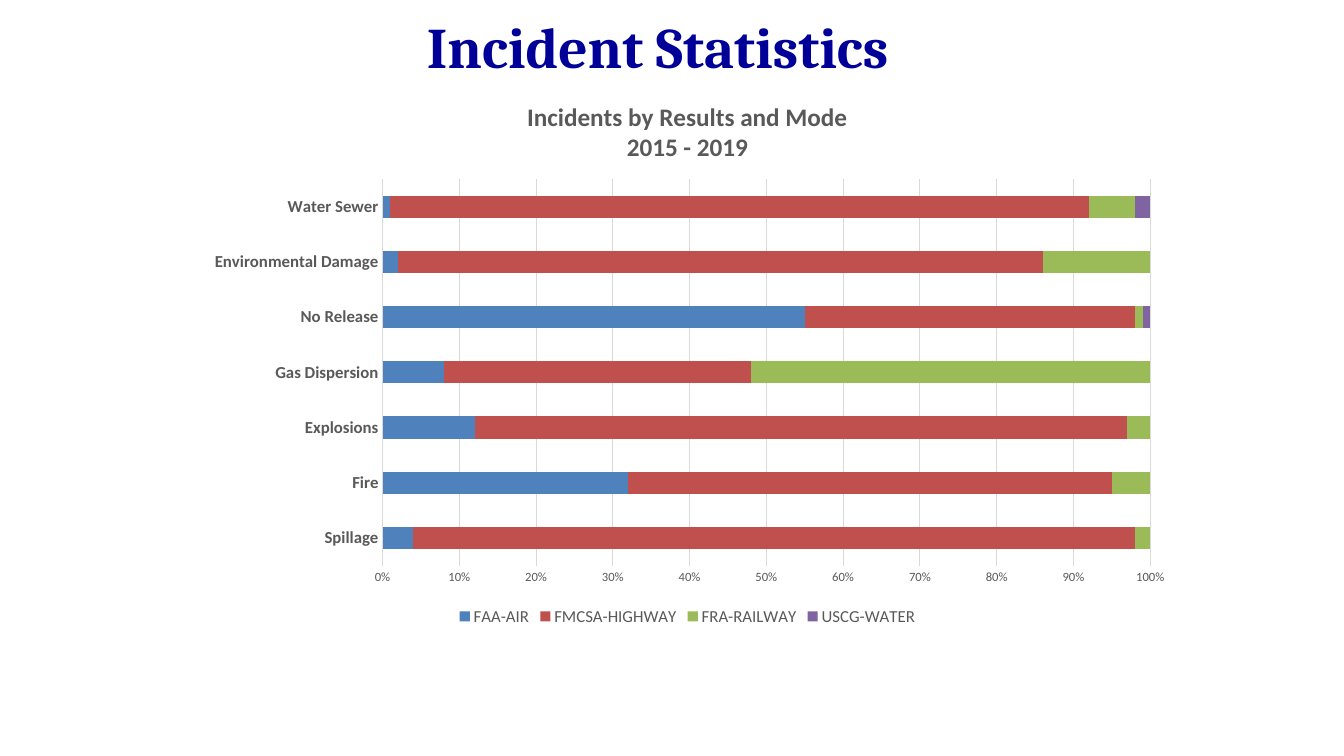
import pptx
import pptx.chart.data
import pptx.dml.color
import pptx.enum.chart
import pptx.enum.text
import pptx.oxml
import pptx.util

THEME = {
    "title": ("Cambria", 41, True, "000099"),
    "chart title": ("Calibri", 18, True, "595959"),
    "category": ("Calibri", 12, True, "595959"),
    "percent": ("Calibri", 9, False, "595959"),
    "legend": ("Calibri", 12, False, "595959"),
    "chart": ("Calibri", 10, False, "000000"),
    "grid": "D9D9D9",
}

RESULTS = ["Spillage", "Fire", "Explosions", "Gas Dispersion",
           "No Release", "Environmental Damage", "Water Sewer"]
MODES = [
    ("FAA-AIR", "4F81BD", (4, 32, 12, 8, 55, 2, 1)),
    ("FMCSA-HIGHWAY", "C0504D", (94, 63, 85, 40, 43, 84, 92)),
    ("FRA-RAILWAY", "9BBB59", (2, 5, 3, 52, 1, 14, 6)),
    ("USCG-WATER", "8064A2", (0, 0, 0, 0, 1, 0, 2)),
]


def style(font, role):
    font.name, size, font.bold, color = THEME[role]
    font.size = pptx.util.Pt(size)
    font.color.rgb = pptx.dml.color.RGBColor.from_string(color)


def draw_line(line, color):
    line.color.rgb = pptx.dml.color.RGBColor.from_string(color)
    line.width = pptx.util.Pt(0.75)


presentation = pptx.Presentation()
presentation.slide_width = width = pptx.util.Inches(13.33)
presentation.slide_height = height = pptx.util.Inches(7.5)
slide = presentation.slides.add_slide(presentation.slide_layouts[5])

title = slide.shapes.title
title.left, title.top = int(width * 0.152), int(height * 0.015)
title.width, title.height = int(width * 0.675), int(height * 0.167)
frame = title.text_frame
frame.auto_size = pptx.enum.text.MSO_AUTO_SIZE.NONE
frame.vertical_anchor = pptx.enum.text.MSO_ANCHOR.TOP
frame.margin_top = 0
paragraph = frame.paragraphs[0]
paragraph.alignment = pptx.enum.text.PP_ALIGN.CENTER
run = paragraph.add_run()
run.text = "Incident Statistics"
style(run.font, "title")

data = pptx.chart.data.CategoryChartData(number_format="#,##0")
data.categories = RESULTS
for name, color, values in MODES:
    data.add_series(name, values)
chart = slide.shapes.add_chart(
    pptx.enum.chart.XL_CHART_TYPE.BAR_STACKED_100,
    int(width * 0.142), int(height * 0.107),
    int(width * 0.739), int(height * 0.727), data).chart
style(chart.font, "chart")

chart.has_title = True
heading = chart.chart_title.text_frame
for index, text in enumerate(["Incidents by Results and Mode", "2015 - 2019"]):
    paragraph = heading.add_paragraph() if index else heading.paragraphs[0]
    run = paragraph.add_run()
    run.text = text
    style(run.font, "chart title")

plot = chart.plots[0]
plot.gap_width = 150
plot.overlap = 100
plot.vary_by_categories = False
for series, (name, color, values) in zip(plot.series, MODES):
    series.format.fill.solid()
    series.format.fill.fore_color.rgb = pptx.dml.color.RGBColor.from_string(color)

for axis, role in [(chart.category_axis, "category"), (chart.value_axis, "percent")]:
    axis.major_tick_mark = pptx.enum.chart.XL_TICK_MARK.NONE
    axis.minor_tick_mark = pptx.enum.chart.XL_TICK_MARK.NONE
    style(axis.tick_labels.font, role)
draw_line(chart.category_axis.format.line, THEME["grid"])
percent_axis = chart.value_axis
percent_axis.format.line.fill.background()
percent_axis.has_major_gridlines = True
draw_line(percent_axis.major_gridlines.format.line, THEME["grid"])
percent_axis.minimum_scale, percent_axis.maximum_scale = 0, 1
percent_axis.major_unit = 0.1
percent_axis.tick_labels.number_format = "0%"
percent_axis.tick_labels.number_format_is_linked = False

chart.has_legend = True
chart.legend.position = pptx.enum.chart.XL_LEGEND_POSITION.BOTTOM
chart.legend.include_in_layout = False
style(chart.legend.font, "legend")

plot_area = chart.element.find(".//" + pptx.oxml.ns.qn("c:plotArea"))
for old_layout in plot_area.findall(pptx.oxml.ns.qn("c:layout")):
    plot_area.remove(old_layout)
plot_area.insert(0, pptx.oxml.parse_xml(
    f'<c:layout {pptx.oxml.ns.nsdecls("c")}><c:manualLayout>'
    '<c:layoutTarget val="inner"/><c:xMode val="edge"/><c:yMode val="edge"/>'
    '<c:x val="0.193"/><c:y val="0.179"/><c:w val="0.773"/><c:h val="0.703"/>'
    '</c:manualLayout></c:layout>'))

presentation.save("out.pptx")
